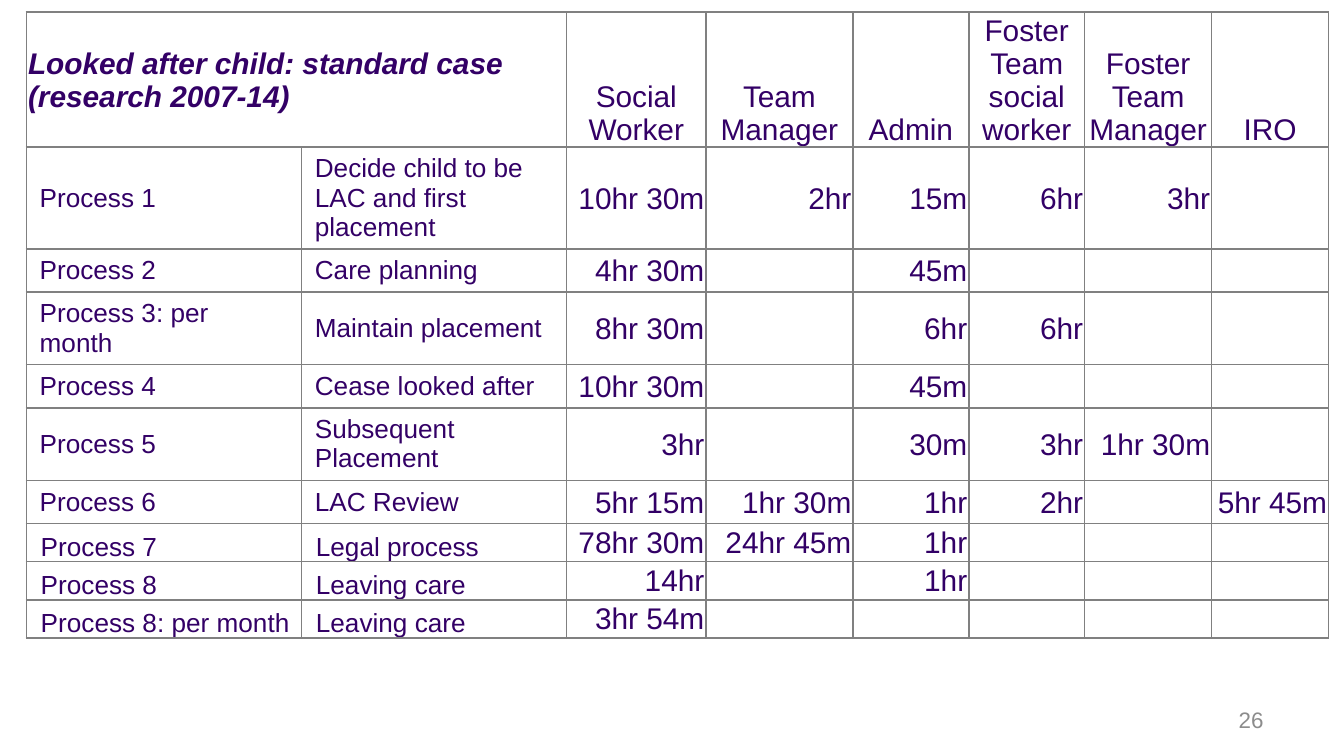
from dataclasses import dataclass

from lxml.etree import SubElement
from pptx import Presentation
from pptx.dml.color import RGBColor
from pptx.enum.text import MSO_ANCHOR as Anchor, PP_ALIGN as Align
from pptx.oxml.ns import qn
from pptx.util import Cm, Pt


@dataclass(frozen=True)
class Theme:
    font: str = "Arial"
    label_ink: str = "330066"
    value_ink: str = "320066"
    number_ink: str = "8C8C8C"
    rule: str = "808080"
    large: int = 16
    label: int = 14
    small: int = 12


THEME = Theme()

# Table content
TITLE = "Looked after child: standard case\n(research 2007-14)"
ROLES = ["Social Worker", "Team Manager", "Admin", "Foster Team social worker",
         "Foster Team Manager", "IRO"]
PROCESSES = [
    ("Process 1", "Decide child to be LAC and first placement",
     "10hr 30m", "2hr", "15m", "6hr", "3hr", ""),
    ("Process 2", "Care planning", "4hr 30m", "", "45m", "", "", ""),
    ("Process 3: per month", "Maintain placement", "8hr 30m", "", "6hr", "6hr", "", ""),
    ("Process 4", "Cease looked after", "10hr 30m", "", "45m", "", "", ""),
    ("Process 5", "Subsequent Placement", "3hr", "", "30m", "3hr", "1hr 30m", ""),
    ("Process 6", "LAC Review", "5hr 15m", "1hr 30m", "1hr", "2hr", "", "5hr 45m"),
    ("Process 7", "Legal process", "78hr 30m", "24hr 45m", "1hr", "", "", ""),
    ("Process 8", "Leaving care", "14hr", "", "1hr", "", "", ""),
    ("Process 8: per month", "Leaving care", "3hr 54m", "", "", "", "", ""),
]
FIRST_COMPACT_ROW = 7

# Table grid in centimetres
COLUMN_WIDTHS = [5.2, 5.01, 2.63, 2.78, 2.19, 2.19, 2.4, 2.21]
ROW_HEIGHTS = [2.55, 1.91, 0.81, 1.36, 0.81, 1.36, 0.81, 0.66, 0.66, 0.66]


def set_values(target, values):
    for name, value in values.items():
        setattr(target, name, value)


def margins(left, top, right, bottom):
    return {"margin_left": Cm(left), "margin_top": Cm(top),
            "margin_right": Cm(right), "margin_bottom": Cm(bottom)}


TIGHT = margins(0.03, 0.03, 0.03, 0)
PADDED = margins(0.25, 0.13, 0.25, 0.13)
COMPACT = margins(0.27, 0, 0, 0)


def write_text(frame, text, size, ink, align=Align.LEFT, strong=False):
    for index, line in enumerate(text.split("\n")):
        para = frame.paragraphs[0] if index == 0 else frame.add_paragraph()
        para.alignment = align
        if not line:
            # An empty cell needs a type size too, or it stretches its row
            SubElement(para._p, qn("a:endParaRPr"), sz=str(size * 100))
            continue
        span = para.add_run()
        span.text = line
        set_values(span.font, {"name": THEME.font, "size": Pt(size),
                               "bold": strong, "italic": strong})
        span.font.color.rgb = RGBColor.from_string(ink)


def outline_cell(cell):
    properties = cell._tc.get_or_add_tcPr()
    for side in ("lnL", "lnR", "lnT", "lnB"):
        line = SubElement(properties, qn(f"a:{side}"), w=str(Pt(1)))
        fill = SubElement(line, qn("a:solidFill"))
        SubElement(fill, qn("a:srgbClr"), val=THEME.rule)
    cell.fill.background()


def fill_cell(cell, text, anchor, insets, **style):
    set_values(cell, {"vertical_anchor": anchor, **insets})
    write_text(cell.text_frame, text, **style)


def add_grid(page):
    frame = page.shapes.add_table(
        len(ROW_HEIGHTS), len(COLUMN_WIDTHS), Cm(0.5), Cm(0.23),
        Cm(sum(COLUMN_WIDTHS)), Cm(sum(ROW_HEIGHTS)))
    table = frame.table
    set_values(table, {"first_row": False, "horz_banding": False})
    for column, width in zip(table.columns, COLUMN_WIDTHS):
        column.width = Cm(width)
    for row, height in zip(table.rows, ROW_HEIGHTS):
        row.height = Cm(height)
    for cell in table.iter_cells():
        outline_cell(cell)
    return table


def fill_header(table):
    table.cell(0, 0).merge(table.cell(0, 1))
    fill_cell(table.cell(0, 0), TITLE, Anchor.MIDDLE, TIGHT,
              size=THEME.large, ink=THEME.label_ink, strong=True)
    for column, role in enumerate(ROLES, start=2):
        fill_cell(table.cell(0, column), role, Anchor.BOTTOM, TIGHT,
                  size=THEME.large, ink=THEME.label_ink, align=Align.CENTER)


def fill_process(table, row, process):
    compact = row >= FIRST_COMPACT_ROW
    anchor, insets = (Anchor.BOTTOM, COMPACT) if compact else (Anchor.MIDDLE, PADDED)
    for column, text in enumerate(process):
        cell = table.cell(row, column)
        if column < 2:
            fill_cell(cell, text, anchor, insets,
                      size=THEME.label, ink=THEME.label_ink)
        else:
            fill_cell(cell, text, Anchor.MIDDLE, TIGHT, size=THEME.large,
                      ink=THEME.value_ink, align=Align.RIGHT)


def add_page_number(page, number):
    box = page.shapes.add_textbox(Cm(18.21), Cm(13.23), Cm(5.92), Cm(0.76))
    set_values(box.text_frame, {"word_wrap": True, "vertical_anchor": Anchor.MIDDLE})
    write_text(box.text_frame, number, THEME.small, THEME.number_ink, Align.RIGHT)


def main():
    deck = Presentation()
    set_values(deck, {"slide_width": Cm(25.4), "slide_height": Cm(14.29)})
    page = deck.slides.add_slide(deck.slide_layouts[6])

    # Hours per process and role
    table = add_grid(page)
    fill_header(table)
    for row, process in enumerate(PROCESSES, start=1):
        fill_process(table, row, process)

    # Footer
    add_page_number(page, "26")
    deck.save("out.pptx")


if __name__ == "__main__":
    main()
